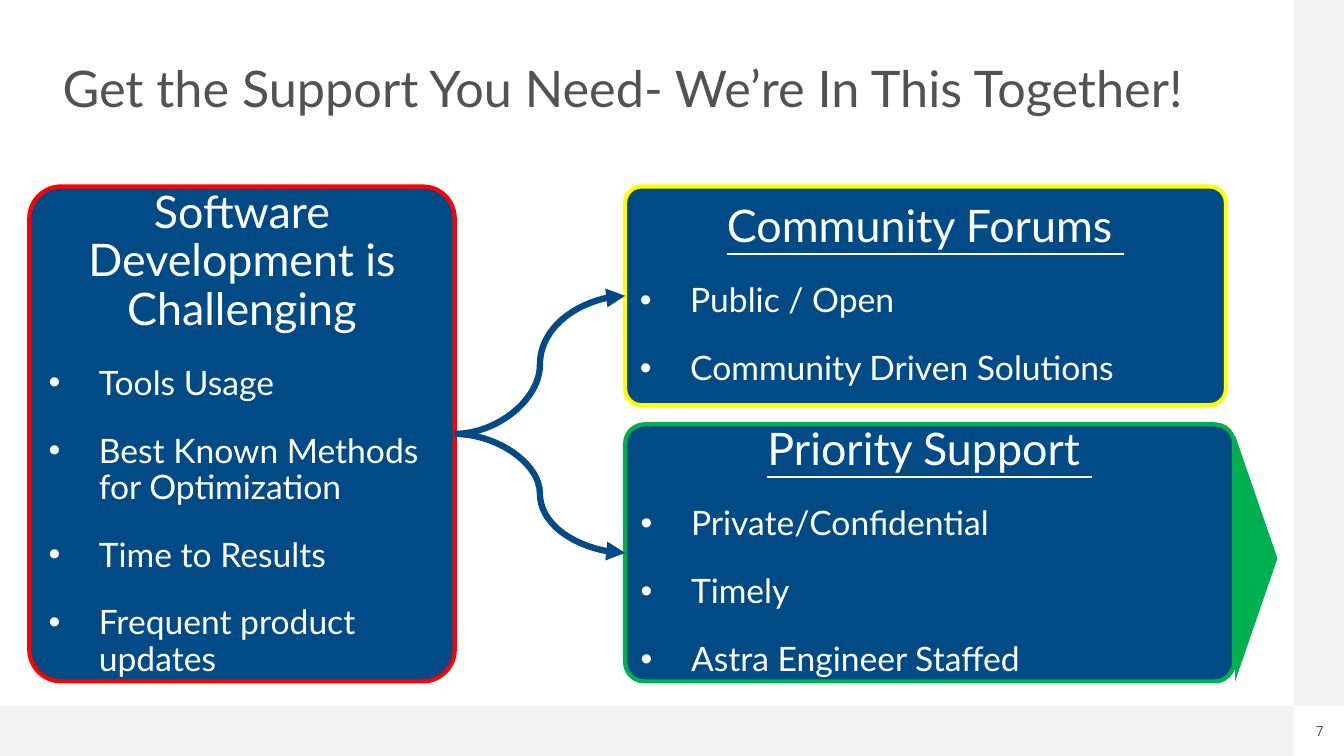
from dataclasses import dataclass

from lxml.etree import SubElement
from pptx import Presentation
from pptx.dml.color import RGBColor
from pptx.enum.shapes import MSO_CONNECTOR, MSO_SHAPE
from pptx.enum.text import MSO_ANCHOR, MSO_AUTO_SIZE, PP_ALIGN
from pptx.oxml.ns import qn
from pptx.util import Inches, Pt


@dataclass(frozen=True)
class Theme:
    text_font: str = "Lato"
    number_font: str = "Roboto"
    gray: str = "525252"
    margin: str = "F2F2F2"
    navy: str = "004A86"
    white: str = "FFFFFF"
    red: str = "FF0000"
    yellow: str = "FFFF00"
    green: str = "00B050"
    title_size: int = 36
    heading_size: int = 32
    bullet_size: int = 24
    number_size: int = 10


class SlideBuilder:
    def __init__(self, slide, theme):
        self.slide = slide
        self.theme = theme

    def add_text(self, paragraph, text, size, color, font=None, underline=False):
        run = paragraph.add_run()
        run.text = text
        style = {"name": font or self.theme.text_font, "size": Pt(size), "underline": underline}
        for key, value in style.items():
            setattr(run.font, key, value)
        run.font.color.rgb = RGBColor.from_string(color)

    def frame(self, shape, anchor, wrap, inset=None):
        settings = {"auto_size": MSO_AUTO_SIZE.NONE, "word_wrap": wrap, "vertical_anchor": anchor}
        if inset is not None:
            for side in ("left", "top", "right", "bottom"):
                settings[f"margin_{side}"] = Inches(inset)
        for key, value in settings.items():
            setattr(shape.text_frame, key, value)
        return shape.text_frame

    def title(self, text, *box):
        title = self.slide.shapes.title
        for key, value in zip(("left", "top", "width", "height"), box):
            setattr(title, key, Inches(value))
        paragraph = self.frame(title, MSO_ANCHOR.TOP, True, 0).paragraphs[0]
        paragraph.alignment = PP_ALIGN.LEFT
        paragraph.line_spacing = 0.9
        self.add_text(paragraph, text, self.theme.title_size, self.theme.gray)

    def shape(self, preset, fill, *box, outline=None, rotation=0):
        shape = self.slide.shapes.add_shape(preset, *map(Inches, box))
        shape.shadow.inherit = False
        shape.rotation = rotation
        shape.fill.solid()
        shape.fill.fore_color.rgb = RGBColor.from_string(fill)
        if outline:
            shape.line.color.rgb = RGBColor.from_string(outline)
            shape.line.width = Pt(3)
        else:
            shape.line.fill.background()
        return shape

    def card(self, heading, bullets, outline, *box, underline=False):
        theme = self.theme
        card = self.shape(MSO_SHAPE.ROUNDED_RECTANGLE, theme.navy, *box, outline=outline)
        card.adjustments[0] = 0.075
        frame = self.frame(card, MSO_ANCHOR.MIDDLE, True)
        first = frame.paragraphs[0]
        first.alignment = PP_ALIGN.CENTER
        first.line_spacing = 0.9
        self.add_text(first, heading, theme.heading_size, theme.white, underline=underline)
        for bullet in bullets:
            paragraph = frame.add_paragraph()
            properties = paragraph._p.get_or_add_pPr()
            properties.set("marL", str(Inches(0.5)))
            properties.set("indent", str(Inches(-0.5)))
            SubElement(properties, qn("a:buFont"), typeface="Arial")
            SubElement(properties, qn("a:buChar"), char="•")
            settings = {"alignment": PP_ALIGN.LEFT, "line_spacing": 0.9, "space_before": Pt(22.5)}
            for key, value in settings.items():
                setattr(paragraph, key, value)
            self.add_text(paragraph, bullet, theme.bullet_size, theme.white)
        return card

    def curve(self, source, target):
        curve = self.slide.shapes.add_connector(MSO_CONNECTOR.CURVE, 0, 0, 0, 0)
        curve.begin_connect(source, 3)
        curve.end_connect(target, 1)
        curve.line.color.rgb = RGBColor.from_string(self.theme.navy)
        curve.line.width = Pt(4.5)
        SubElement(curve.line._get_or_add_ln(), qn("a:tailEnd"), type="triangle")
        SubElement(curve._element.spPr, qn("a:effectLst"))

    def page_number(self, text, *box):
        number = self.slide.shapes.add_textbox(*map(Inches, box))
        paragraph = self.frame(number, MSO_ANCHOR.TOP, False, 0).paragraphs[0]
        paragraph.alignment = PP_ALIGN.CENTER
        self.add_text(paragraph, text, self.theme.number_size, self.theme.gray, self.theme.number_font)


def main():
    presentation = Presentation()
    presentation.slide_width = Inches(13.33)
    presentation.slide_height = Inches(7.5)
    theme = Theme()
    builder = SlideBuilder(presentation.slides.add_slide(presentation.slide_layouts[5]), theme)

    builder.shape(MSO_SHAPE.RECTANGLE, theme.margin, 0, 7, 12.83, 0.5)
    builder.page_number("7", 13.01, 7.17, 0.16, 0.17)
    builder.shape(MSO_SHAPE.RECTANGLE, theme.margin, 12.83, 0, 0.5, 7)
    builder.title("Get the Support You Need- We’re In This Together!", 0.62, 0.63, 12.04, 1.04)

    challenges = builder.card(
        "Software Development is Challenging",
        ["Tools Usage", "Best Known Methods for Optimization",
         "Time to Results", "Frequent product updates"],
        theme.red, 0.29, 1.85, 4.22, 4.91)
    forums = builder.card(
        "Community Forums ", ["Public / Open", "Community Driven Solutions"],
        theme.yellow, 6.2, 1.85, 5.96, 2.17, underline=True)
    priority = builder.card(
        "Priority Support ", ["Private/Confidential", "Timely", "Astra Engineer Staffed"],
        theme.green, 6.2, 4.21, 6.04, 2.55, underline=True)

    for support in (forums, priority):
        builder.curve(challenges, support)
    builder.shape(MSO_SHAPE.ISOSCELES_TRIANGLE, theme.green, 11.24, 5.33, 2.44, 0.42, rotation=90)

    presentation.save("out.pptx")


if __name__ == "__main__":
    main()
